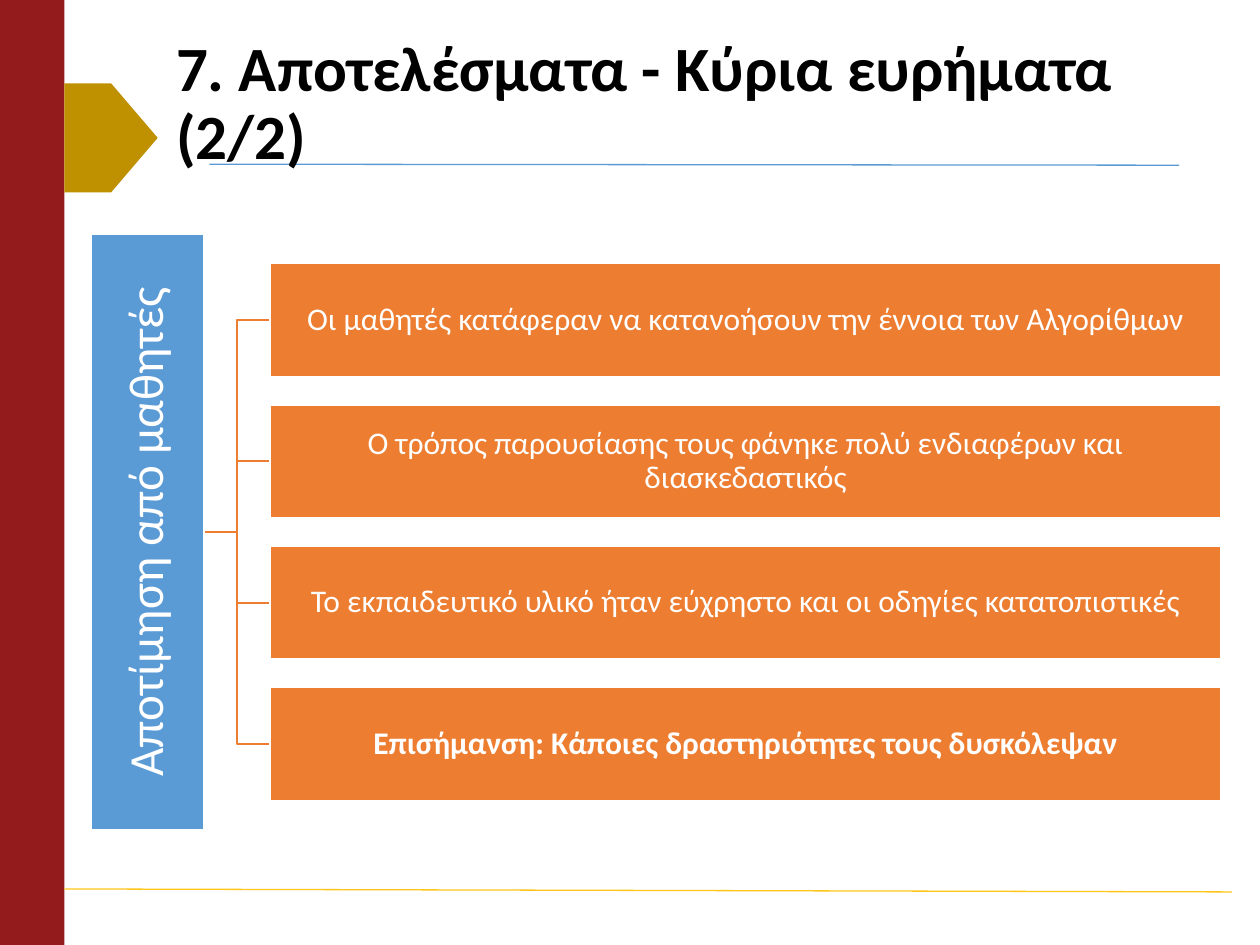
from dataclasses import dataclass

from lxml import etree
from pptx import Presentation
from pptx.dml.color import RGBColor
from pptx.enum.shapes import MSO_CONNECTOR, MSO_SHAPE
from pptx.enum.text import MSO_ANCHOR, PP_ALIGN
from pptx.oxml.ns import qn
from pptx.util import Cm, Pt

RECTANGLE, PENTAGON = MSO_SHAPE.RECTANGLE, MSO_SHAPE.PENTAGON
STRAIGHT = MSO_CONNECTOR.STRAIGHT
MIDDLE = MSO_ANCHOR.MIDDLE
LEFT, CENTER = PP_ALIGN.LEFT, PP_ALIGN.CENTER


@dataclass(frozen=True)
class Theme:
    font: str = "Calibri"
    title_size: float = 36
    label_size: float = 28
    body_size: float = 18
    rule_width: float = 0.75
    outline_width: float = 1
    black: str = "000000"
    white: str = "FFFFFF"
    red: str = "931B1B"
    gold: str = "BF9000"
    yellow: str = "FFC61A"
    blue: str = "5B9BD5"
    orange: str = "ED7D31"


class SlideBuilder:
    def __init__(self, slide, theme):
        self.slide = slide
        self.theme = theme

    def box(self, preset, left, top, width, height, fill, outline=None):
        shape = self.slide.shapes.add_shape(
            preset, Cm(left), Cm(top), Cm(width), Cm(height))
        shape.shadow.inherit = False
        shape.fill.solid()
        shape.fill.fore_color.rgb = RGBColor.from_string(fill)
        if outline:
            self.stroke(shape.line, outline, self.theme.outline_width)
        else:
            shape.line.fill.background()
        return shape

    def stroke(self, line, color, width):
        line.color.rgb = RGBColor.from_string(color)
        line.width = Pt(width)

    def rule(self, start, end, color):
        connector = self.slide.shapes.add_connector(
            STRAIGHT, *(Cm(value) for value in (*start, *end)))
        self.stroke(connector.line, color, self.theme.rule_width)
        etree.SubElement(connector._element.spPr, qn("a:effectLst"))

    def branch(self, points, color):
        """Draw an open bent line through the points."""
        start, *others = [(Cm(x), Cm(y)) for x, y in points]
        builder = self.slide.shapes.build_freeform(*start)
        builder.add_line_segments(others, close=False)
        shape = builder.convert_to_shape()
        shape.shadow.inherit = False
        shape.fill.background()
        self.stroke(shape.line, color, self.theme.outline_width)

    def text(self, shape, wording, size, color, align=CENTER, bold=False, inset=0.03):
        frame = shape.text_frame
        frame_format = {"word_wrap": True, "vertical_anchor": MIDDLE}
        for side in ("left", "top", "right", "bottom"):
            frame_format[f"margin_{side}"] = Cm(inset)
        paragraph = frame.paragraphs[0]
        run = paragraph.add_run()
        run.text = wording
        formats = (
            (frame, frame_format),
            (paragraph, {"alignment": align, "line_spacing": 0.9}),
            (run.font, {"name": self.theme.font, "size": Pt(size), "bold": bold}),
        )
        for target, values in formats:
            for name, value in values.items():
                setattr(target, name, value)
        run.font.color.rgb = RGBColor.from_string(color)

    def title(self, wording, left, top, width, height):
        shape = self.slide.shapes.add_textbox(
            Cm(left), Cm(top), Cm(width), Cm(height))
        self.text(shape, wording, self.theme.title_size, self.theme.black,
                  align=LEFT, bold=True, inset=0.25)


def add_frame(builder):
    theme = builder.theme
    builder.box(RECTANGLE, 0, 0, 1.3, 19.05, theme.red)
    builder.rule((4.22, 3.31), (23.77, 3.33), theme.blue)
    builder.rule((1.3, 17.92), (24.84, 17.98), theme.yellow)
    builder.box(PENTAGON, 1.3, 1.68, 1.88, 2.2, theme.gold)


def add_findings(builder, label, findings):
    """Draw the vertical label, one bar per finding and the branches between."""
    theme = builder.theme
    bar_left, bar_width, bar_height = 5.44, 19.18, 2.28
    first_top, pitch = 5.31, 2.85
    label_length, label_middle, label_right = 12, 2.97, 4.11
    fork = (label_right + bar_left) / 2
    center = first_top + ((len(findings) - 1) * pitch + bar_height) / 2
    tops = [first_top + index * pitch for index in range(len(findings))]

    for top in tops:
        middle = top + bar_height / 2
        builder.branch([(label_right, center), (fork, center),
                        (fork, middle), (bar_left, middle)], theme.orange)

    label_box = builder.box(
        RECTANGLE, label_middle - label_length / 2, center - bar_height / 2,
        label_length, bar_height, theme.blue, theme.white)
    label_box.rotation = 270
    builder.text(label_box, label, theme.label_size, theme.white, inset=0.05)

    for top, (wording, bold) in zip(tops, findings):
        bar = builder.box(RECTANGLE, bar_left, top, bar_width, bar_height,
                          theme.orange, theme.white)
        builder.text(bar, wording, theme.body_size, theme.white, bold=bold)


def main():
    presentation = Presentation()
    presentation.slide_width, presentation.slide_height = Cm(25.4), Cm(19.05)
    slide = presentation.slides.add_slide(presentation.slide_layouts[6])
    builder = SlideBuilder(slide, Theme())
    add_frame(builder)
    builder.title("7. Αποτελέσματα - Κύρια ευρήματα (2/2)", 3.3, 1.32, 21.59, 1.6)
    add_findings(builder, "Αποτίμηση από μαθητές", [
        ("Οι μαθητές κατάφεραν να κατανοήσουν την έννοια των Αλγορίθμων", False),
        ("Ο τρόπος παρουσίασης τους φάνηκε πολύ ενδιαφέρων και διασκεδαστικός", False),
        ("Το εκπαιδευτικό υλικό ήταν εύχρηστο και οι οδηγίες κατατοπιστικές", False),
        ("Επισήμανση: Κάποιες δραστηριότητες τους δυσκόλεψαν", True),
    ])
    presentation.save("out.pptx")


if __name__ == "__main__":
    main()
